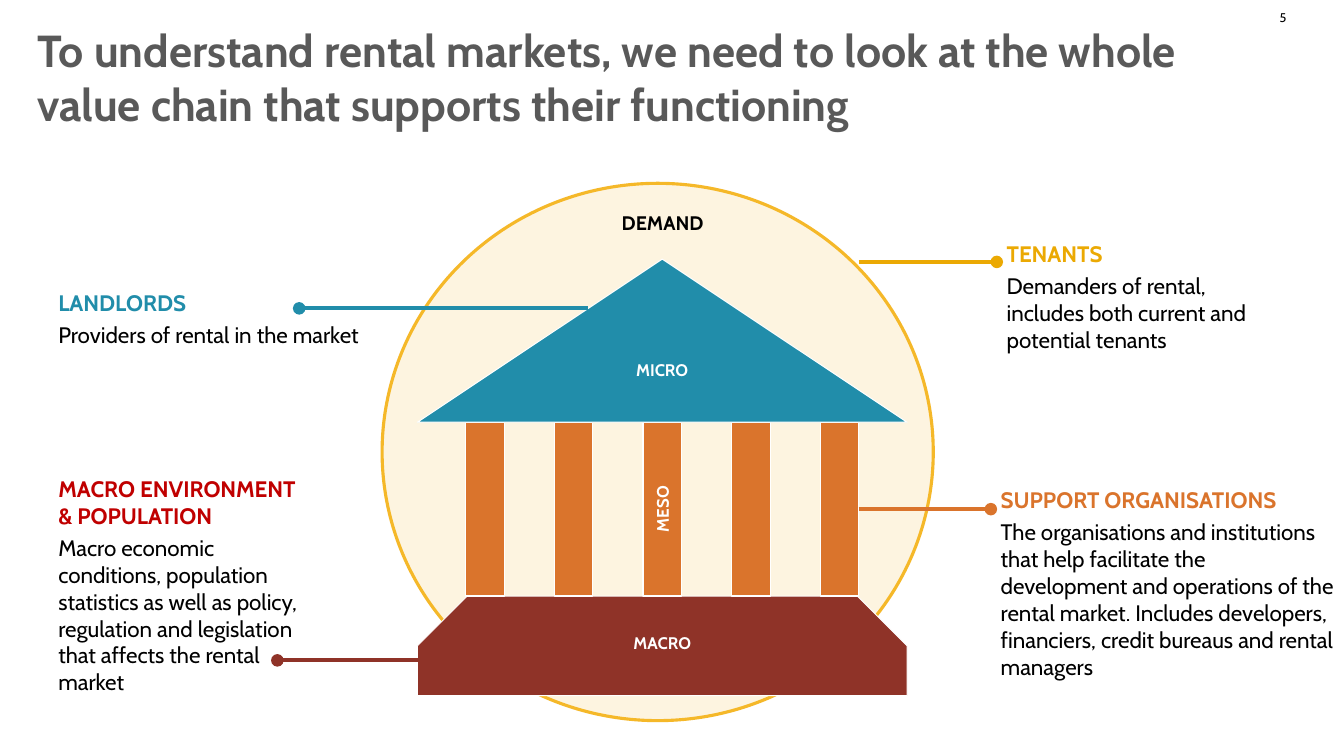
import pptx
import pptx.util
import pptx.dml.color
import pptx.enum.shapes
import pptx.enum.text
import pptx.oxml.ns
from lxml import etree

Cm, Pt = pptx.util.Cm, pptx.util.Pt
KIND = pptx.enum.shapes.MSO_SHAPE
ALIGN = pptx.enum.text.PP_ALIGN
ANCHOR = pptx.enum.text.MSO_ANCHOR
qn = pptx.oxml.ns.qn

HUE = {
    "title": "595959", "text": "000000", "white": "FFFFFF",
    "ring": "F5B829", "tenant": "EBA903", "micro": "218DAA",
    "meso": "DA742C", "macro": "8F3328", "red": "C00000",
}


def rgb(name):
    return pptx.dml.color.RGBColor.from_string(HUE[name])


def add_shape(slide, kind, box, fill, line="white", width=0.75):
    shape = slide.shapes.add_shape(kind, *map(Cm, box))
    shape.shadow.inherit = False
    shape.fill.solid()
    shape.fill.fore_color.rgb = rgb(fill)
    shape.line.color.rgb = rgb(line)
    shape.line.width = Pt(width)
    return shape


def add_text(slide, box, paras, align=ALIGN.LEFT, anchor=ANCHOR.TOP):
    """Each paragraph is (text, size, colour, bold)."""
    shape = slide.shapes.add_textbox(*map(Cm, box))
    frame = shape.text_frame
    frame.word_wrap = True
    frame.vertical_anchor = anchor
    for i, (text, size, hue, bold) in enumerate(paras):
        para = frame.add_paragraph() if i else frame.paragraphs[0]
        para.text = text
        para.alignment = align
        para.space_before = Pt(4 if i else 0)
        para.font.name = "Cabin"
        para.font.size = Pt(size)
        para.font.bold = bold
        para.font.color.rgb = rgb(hue)
    return shape


def add_lead(slide, start, end, y, hue):
    """Level line with a dot at its end."""
    lead = slide.shapes.add_connector(
        pptx.enum.shapes.MSO_CONNECTOR.STRAIGHT, Cm(start), Cm(y), Cm(end), Cm(y))
    lead.line.color.rgb = rgb(hue)
    lead.line.width = Pt(3)
    etree.SubElement(lead.line._get_or_add_ln(), qn("a:tailEnd"), type="oval")
    etree.SubElement(lead._element.spPr, qn("a:effectLst"))
    return lead


def add_head(slide, box):
    x, y, w, h = box
    title = ("To understand rental markets, we need to look at the whole "
             "value chain that supports their functioning")
    add_text(slide, (x, y + 0.23, w, 3.18), [(title, 32, "title", True)],
             anchor=ANCHOR.BOTTOM)
    add_text(slide, (x + w - 0.69, y, 1.85, 0.76), [("5", 9, "text", False)],
             anchor=ANCHOR.BOTTOM)


def add_ring(slide, box):
    x, y, w, h = box
    ring = add_shape(slide, KIND.OVAL, box, "ring", "ring", 2.25)
    shade = ring.fill._xPr.find(qn("a:solidFill"))[0]
    etree.SubElement(shade, qn("a:alpha"), val="14000")
    add_text(slide, (x + w / 2 - 1.63, y + 0.56, 3.51, 0.86),
             [("DEMAND", 14, "text", True)], ALIGN.CENTER)


def add_temple(slide, box):
    """Roof, five pillars and base; returns the last pillar."""
    x, y, w, h = box
    roof, base, thick, inset = 4.11, 2.51, 0.97, 1.22
    tall = h - roof - base
    step = (w - 2 * inset - thick) / 4
    foot = add_shape(slide, KIND.SNIP_2_SAME_RECTANGLE,
                     (x, y + h - base, w, base), "macro")
    foot.adjustments[0] = 0.5
    foot.adjustments[1] = 0
    for i in range(5):
        pillar = add_shape(slide, KIND.RECTANGLE,
                           (x + inset + i * step, y + roof, thick, tall), "meso")
    add_shape(slide, KIND.ISOSCELES_TRIANGLE, (x, y, w, roof), "micro")

    # Level names
    mid = x + w / 2
    for name, top, turn in (("MICRO", y + 2.41, 0),
                            ("MESO", y + roof + tall / 2 - 0.38, 270),
                            ("MACRO", y + 9.29, 0)):
        label = add_text(slide, (mid - 3.1, top, 6.2, 0.76),
                         [(name, 12, "white", True)], ALIGN.CENTER)
        label.rotation = turn
    return pillar


def add_note(slide, box, head, body, hue):
    add_text(slide, box, [(head, 16, hue, True), (body, 16, "text", False)])


def add_notes(slide, box, pillar):
    x, y, w, h = box
    # Left side
    add_note(slide, (x, y + 1.24, 9.47, 1.78), "LANDLORDS",
             "Providers of rental in the market", "micro")
    add_lead(slide, x + 13.59, x + 6.32, y + 1.85, "micro")
    add_note(slide, (x, y + 5.92, 6.78, 5.87), "MACRO ENVIRONMENT & POPULATION",
             "Macro economic conditions, population statistics as well as "
             "policy, regulation and legislation that affects the rental market",
             "red")
    add_lead(slide, x + 9.8, x + 5.77, y + 10.72, "macro")
    # Right side
    add_note(slide, (x + 23.9, y, 6.88, 3.96), "TENANTS",
             "Demanders of rental, includes both current and potential tenants",
             "tenant")
    add_lead(slide, x + 20.42, x + 23.9, y + 0.68, "tenant")
    add_note(slide, (x + w - 8.91, y + 6.2, 8.91, 5.18), "SUPPORT ORGANISATIONS",
             "The organisations and institutions that help facilitate the "
             "development and operations of the rental market. Includes "
             "developers, financiers, credit bureaus and rental managers", "meso")
    lead = add_lead(slide, x + 20.42, x + 23.75, y + 6.91, "meso")
    lead.begin_connect(pillar, 3)


def main():
    deck = pptx.Presentation()
    deck.slide_width, deck.slide_height = Cm(33.87), Cm(19.05)
    slide = deck.slides.add_slide(deck.slide_layouts[6])
    add_ring(slide, (9.63, 4.62, 13.89, 13.54))
    add_head(slide, (0.69, 0, 32, 3.41))
    pillar = add_temple(slide, (10.52, 6.53, 12.34, 11))
    add_notes(slide, (1.22, 5.92, 32.66, 11.79), pillar)
    deck.save("out.pptx")


if __name__ == "__main__":
    main()
